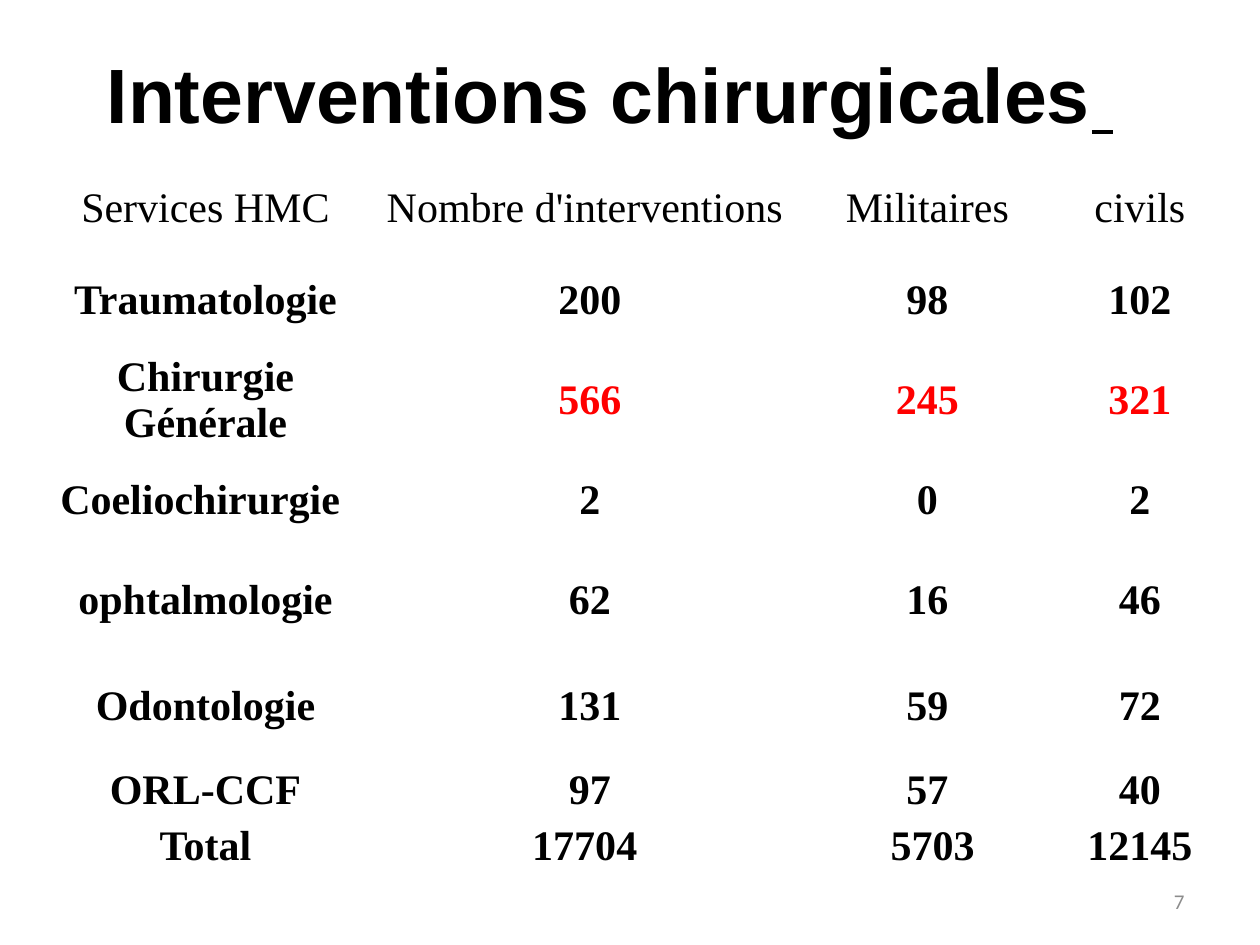
from pptx import Presentation
from pptx.dml.color import RGBColor
from pptx.enum.text import MSO_ANCHOR, PP_ALIGN

# Content
TITLE = "Interventions chirurgicales"
PAGE = "7"
ROWS = [
    ("Services HMC", "Nombre d'interventions ", "Militaires", "civils"),
    ("Traumatologie", "200", "98", "102"),
    ("Chirurgie Générale", "566", "245", "321"),
    ("Coeliochirurgie ", "2", "0", "2"),
    ("ophtalmologie", "62", "16", "46"),
    ("Odontologie", "131", "59", "72"),
    ("ORL-CCF", "97", "57", "40"),
    ("Total", "17704 ", " 5703", "12145"),
]
HOT = 2  # row whose figures stand out

# Theme: font, size in points, colour
THEME = {
    "title": ("Arial", 44, "000000"),
    "cell": ("Times New Roman", 24, "000000"),
    "hot": ("Times New Roman", 24, "FF0000"),
    "page": ("Calibri", 12, "8C8C8C"),
}

# Layout in px, 126 to the inch
PX = 914400 // 126
PT = 12700
WIDE, HIGH = 1260, 945
TITLE_BOX = (43, 14, 1134, 157)
PAGE_BOX = (903, 876, 294, 50)
LEFT, TOP = 40, 165
COLS = (331, 438, 237, 188)
TALL = (86, 98, 100, 99, 100, 112, 57, 55)


def style(para, key, align, bold=False):
    font, size, color = THEME[key]
    para.alignment = align
    for run in para.runs:
        run.font.name = font
        run.font.size = size * PT
        run.font.bold = bold
        run.font.color.rgb = RGBColor.from_string(color)


def add_text(slide, box, text):
    frame = slide.shapes.add_textbox(*(n * PX for n in box)).text_frame
    frame.word_wrap = True
    frame.vertical_anchor = MSO_ANCHOR.MIDDLE
    frame.text = text
    return frame.paragraphs[0]


def add_grid(slide):
    grid = slide.shapes.add_table(
        len(ROWS), len(COLS), LEFT * PX, TOP * PX,
        sum(COLS) * PX, sum(TALL) * PX).table
    grid.first_row = grid.horz_banding = False
    for col, wide in zip(grid.columns, COLS):
        col.width = wide * PX
    for r, (row, high) in enumerate(zip(ROWS, TALL)):
        grid.rows[r].height = high * PX
        for c, text in enumerate(row):
            cell = grid.cell(r, c)
            cell.fill.background()
            cell.margin_left = cell.margin_right = cell.margin_top = PX
            cell.margin_bottom = 0
            cell.vertical_anchor = MSO_ANCHOR.MIDDLE
            cell.text_frame.text = text
            key = "hot" if r == HOT and c > 0 else "cell"
            style(cell.text_frame.paragraphs[0], key, PP_ALIGN.CENTER, r > 0)


def main():
    deck = Presentation()
    deck.slide_width, deck.slide_height = WIDE * PX, HIGH * PX
    slide = deck.slides.add_slide(deck.slide_layouts[6])

    # Title, ending in an underlined space
    head = add_text(slide, TITLE_BOX, TITLE)
    tail = head.add_run()
    tail.text = " "
    tail.font.underline = True
    style(head, "title", PP_ALIGN.CENTER, True)

    # Table and page number
    add_grid(slide)
    style(add_text(slide, PAGE_BOX, PAGE), "page", PP_ALIGN.RIGHT)
    deck.save("out.pptx")


if __name__ == "__main__":
    main()
